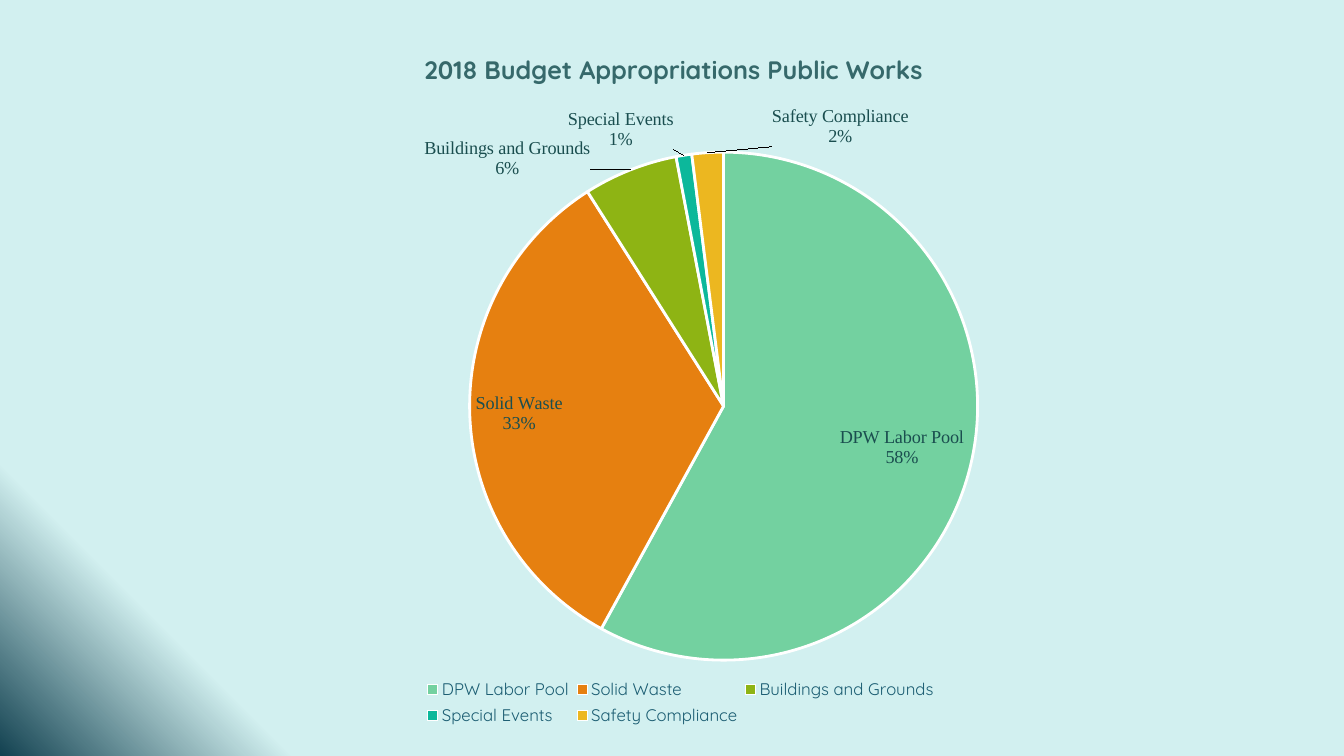
from dataclasses import dataclass

from lxml import etree
from pptx import Presentation
from pptx import util as u
from pptx.chart.data import CategoryChartData
from pptx.dml.color import RGBColor
from pptx.enum import chart as ch
from pptx.oxml.ns import qn

MIST = RGBColor(0xD2, 0xF0, 0xF0)
DEEP_TEAL = RGBColor(0x13, 0x42, 0x51)
TITLE_TEAL = RGBColor(0x36, 0x69, 0x6B)
LEGEND_BLUE = RGBColor(0x1B, 0x5D, 0x72)
LABEL_TEAL = RGBColor(0x1A, 0x4E, 0x4F)
WHITE = RGBColor(0xFF, 0xFF, 0xFF)
MINT = RGBColor(0x73, 0xD1, 0xA0)
ORANGE = RGBColor(0xE6, 0x80, 0x10)
GREEN = RGBColor(0x8E, 0xB4, 0x14)
TEAL = RGBColor(0x0C, 0xB8, 0x9B)
GOLD = RGBColor(0xEC, 0xB7, 0x20)
SANS = "Quicksand"
SERIF = "Times New Roman"


@dataclass
class Slice:
    name: str
    percent: int
    color: RGBColor
    label_shift: tuple[float, float] | None = None


SLICES = [
    Slice("DPW Labor Pool", 58, MINT),
    Slice("Solid Waste", 33, ORANGE),
    Slice("Buildings and Grounds", 6, GREEN, (-0.04, 0.02)),
    Slice("Special Events", 1, TEAL, (-0.01, 0.0)),
    Slice("Safety Compliance", 2, GOLD, (0.14, 0.0)),
]


def style_font(font, size: float, color: RGBColor, name: str, bold: bool = False) -> None:
    font.size, font.name, font.bold = u.Pt(size), name, bold
    font.color.rgb = color


def make_layout(**values: float | str) -> etree._Element:
    layout = etree.Element(qn("c:layout"))
    manual = etree.SubElement(layout, qn("c:manualLayout"))
    for tag, value in values.items():
        etree.SubElement(manual, qn(f"c:{tag}")).set("val", str(value))
    return layout


def place(parent, before: str, **values: float | str) -> None:
    for old in parent.findall(qn("c:layout")):
        parent.remove(old)
    parent.find(qn(before)).addprevious(
        make_layout(xMode="edge", yMode="edge", **values))


def show_name_and_percent(labels) -> None:
    for tag, shown in (("showVal", "0"), ("showCatName", "1"), ("showPercent", "1")):
        labels.find(qn(f"c:{tag}")).set("val", shown)
    separator = etree.Element(qn("c:separator"))
    separator.text = "\n"
    labels.find(qn("c:showBubbleSize")).addnext(separator)


def paint_background(s) -> None:
    fill = s.background.fill
    fill.gradient()
    fill.gradient_angle = 225
    for stop, color, position in zip(fill.gradient_stops, (MIST, DEEP_TEAL), (0.86, 1)):
        stop.color.rgb = color
        stop.position = position


def style_slices(series) -> None:
    labels = series.data_labels
    labels.position = ch.XL_LABEL_POSITION.INSIDE_END
    style_font(labels.font, 13, LABEL_TEAL, SERIF)
    for i, part in enumerate(SLICES):
        point = series.points[i]
        point.format.fill.solid()
        point.format.fill.fore_color.rgb = part.color
        point.format.line.color.rgb = WHITE
        point.format.line.width = u.Pt(2)
        if part.label_shift:
            label = point.data_label
            style_font(label.font, 13, LABEL_TEAL, SERIF)
            label.position = ch.XL_LABEL_POSITION.OUTSIDE_END


def add_budget_chart(s) -> None:
    data = CategoryChartData(number_format="0")
    data.categories = [part.name for part in SLICES]
    data.add_series("Series 1", [part.percent for part in SLICES])
    chart = s.shapes.add_chart(ch.XL_CHART_TYPE.PIE, u.Pt(144), u.Pt(18),
                               u.Pt(678), u.Pt(504), data).chart
    style_font(chart.font, 10, WHITE, SANS)

    chart.has_title = True
    p = chart.chart_title.text_frame.paragraphs[0]
    p.text = "2018 Budget Appropriations Public Works"
    style_font(p.font, 18, TITLE_TEAL, SANS, True)

    chart.has_legend = True
    chart.legend.position = ch.XL_LEGEND_POSITION.BOTTOM
    chart.legend.include_in_layout = False
    style_font(chart.legend.font, 12, LEGEND_BLUE, SANS)

    chart.plots[0].vary_by_categories = True
    style_slices(chart.plots[0].series[0])

    root = chart.element
    for labels in root.xpath(".//c:ser/c:dLbls | .//c:ser/c:dLbls/c:dLbl"):
        show_name_and_percent(labels)
    for label in root.xpath(".//c:dLbl"):
        x, y = SLICES[int(label.find(qn("c:idx")).get("val"))].label_shift
        label.find(qn("c:idx")).addnext(make_layout(x=x, y=y))
    place(root.xpath(".//c:title")[0], "c:overlay", x=0.23, y=0.03)
    place(root.xpath(".//c:legend")[0], "c:overlay", x=0.23, y=0.92, w=0.55, h=0.08)
    place(root.xpath(".//c:plotArea")[0], "c:pieChart",
          layoutTarget="inner", x=0.28, y=0.18, w=0.54, h=0.72)


def main() -> None:
    prs = Presentation()
    prs.slide_width, prs.slide_height = u.Pt(960), u.Pt(540)
    s = prs.slides.add_slide(prs.slide_layouts[6])
    paint_background(s)
    add_budget_chart(s)
    prs.save("out.pptx")


if __name__ == "__main__":
    main()
